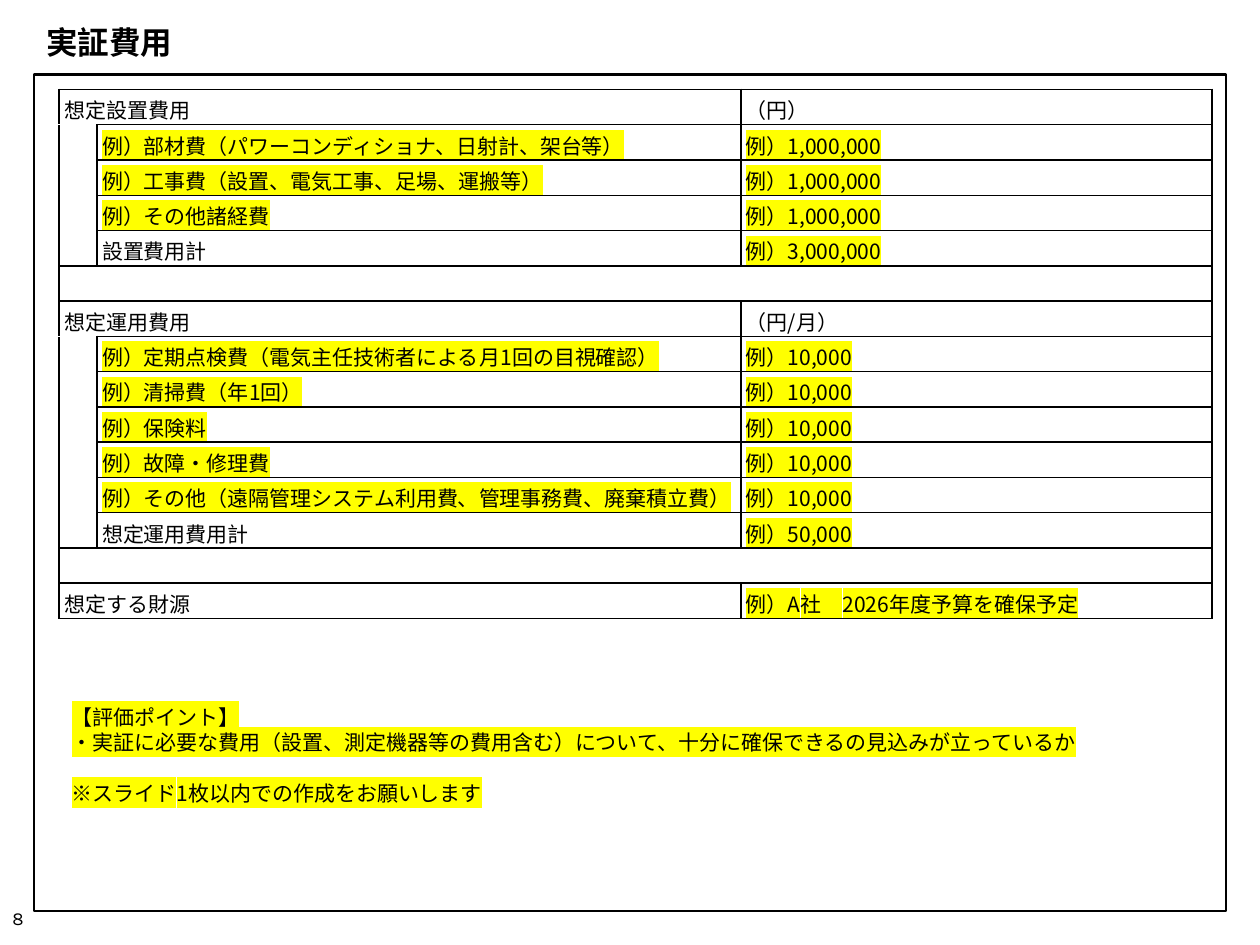
from dataclasses import dataclass
from typing import Any

from lxml.etree import SubElement
from pptx import Presentation
from pptx.dml.color import RGBColor
from pptx.enum.shapes import MSO_SHAPE
from pptx.enum.text import MSO_ANCHOR
from pptx.oxml import parse_xml
from pptx.oxml.ns import nsdecls, qn
from pptx.util import Inches, Pt

COST = [
    ("想定設置費用", "（円）", [
        ("例）部材費（パワーコンディショナ、日射計、架台等）", "例）1,000,000"),
        ("例）工事費（設置、電気工事、足場、運搬等）", "例）1,000,000"),
        ("例）その他諸経費", "例）1,000,000"),
        ("設置費用計", "例）3,000,000"),
    ]),
    ("想定運用費用", "（円/月）", [
        ("例）定期点検費（電気主任技術者による月1回の目視確認）", "例）10,000"),
        ("例）清掃費（年1回）", "例）10,000"),
        ("例）保険料", "例）10,000"),
        ("例）故障・修理費", "例）10,000"),
        ("例）その他（遠隔管理システム利用費、管理事務費、廃棄積立費）", "例）10,000"),
        ("想定運用費用計", "例）50,000"),
    ]),
]
FUND = ("想定する財源", "例）A社　2026年度予算を確保予定")
NOTES = [
    "【評価ポイント】",
    "・実証に必要な費用（設置、測定機器等の費用含む）について、十分に確保できるの見込みが立っているか",
    "※スライド1枚以内での作成をお願いします",
]


def color(code):
    """Turn a hex string into a colour."""
    return RGBColor.from_string(code)


@dataclass
class Page:
    """Style and current slide, with a method for each kind of element."""
    slide: Any
    font: str = "Noto Sans CJK JP"
    ink: str = "000000"
    mark: str = "FFFF00"
    paper: str = "FFFFFF"

    def label(self, para, text, size=12, font=None, bold=False, mark=False):
        """Fill a paragraph with one styled run."""
        name = font or self.font
        style = para.font
        style.name, style.size, style.bold = name, Pt(size), bold
        style.color.rgb = color(self.ink)
        run = para.add_run()
        run.text = text
        props = run._r.get_or_add_rPr()
        if mark:
            light = SubElement(props, qn("a:highlight"))
            SubElement(light, qn("a:srgbClr")).set("val", self.mark)
        SubElement(props, qn("a:ea")).set("typeface", name)

    def text(self, box, lines, anchor=MSO_ANCHOR.MIDDLE, **style):
        """Add a text box and return its paragraphs."""
        frame = self.slide.shapes.add_textbox(*map(Inches, box)).text_frame
        frame.word_wrap = True
        frame.vertical_anchor = anchor
        for i, line in enumerate(lines):
            para = frame.add_paragraph() if i else frame.paragraphs[0]
            self.label(para, line, **style)
        return frame.paragraphs

    def frame(self, box):
        """Add an unfilled outline."""
        shape = self.slide.shapes.add_shape(MSO_SHAPE.RECTANGLE, *map(Inches, box))
        shape.shadow.inherit = False
        shape.fill.background()
        shape.line.color.rgb = color(self.ink)
        shape.line.width = Pt(1.5)

    def edge(self, cell, white=""):
        """Draw the four cell borders, those named in white being pale."""
        props = cell._tc.get_or_add_tcPr()
        for i, side in enumerate("LRTB"):
            tone = self.paper if side in white else self.ink
            props.insert(i, parse_xml(
                f'<a:ln{side} {nsdecls("a")} w="12700"><a:solidFill>'
                f'<a:srgbClr val="{tone}"/></a:solidFill></a:ln{side}>'))

    def cell(self, cell, text, white=""):
        """Style a table cell and fill in its text."""
        cell.fill.background()
        self.edge(cell, white)
        cell.vertical_anchor = MSO_ANCHOR.MIDDLE
        cell.margin_left = cell.margin_right = Inches(0.04)
        cell.margin_top = cell.margin_bottom = Inches(0.04)
        para = cell.text_frame.paragraphs[0]
        if text:
            self.label(para, text, mark=text.startswith("例"))
        else:
            para._p.get_or_add_endParaRPr().set("sz", "1200")

    def table(self, box, cols, rows, spans, white):
        """Add a table with merged cells."""
        grid = self.slide.shapes.add_table(
            len(rows), len(cols), *map(Inches, box)).table
        grid.first_row = grid.horz_banding = False
        for col, wide in zip(grid.columns, cols):
            col.width = Inches(wide)
        for r, row in enumerate(rows):
            grid.rows[r].height = Inches(box[3] / len(rows))
            for c, text in enumerate(row):
                self.cell(grid.cell(r, c), text, white.get((r, c), ""))
        for first, last in spans:
            grid.cell(*first).merge(grid.cell(*last))


def plan():
    """Work out rows, merged spans and pale borders of the cost table."""
    rows, spans, white = [], [], {}
    for head, unit, items in COST:
        top = len(rows)
        end = top + len(items)
        rows += [(head, "", unit), *(("", *item) for item in items), ("", "", "")]
        spans += [((top, 0), (top, 1)), ((top + 1, 0), (end, 0)),
                  ((end + 1, 0), (end + 1, 2))]
        white |= {(top, 0): "B", (top + 1, 0): "T"}
    last = len(rows)
    rows.append((FUND[0], "", FUND[1]))
    spans.append(((last, 0), (last, 1)))
    return rows, spans, white


def main():
    """Build and save the slide."""
    deck = Presentation()
    deck.slide_width, deck.slide_height = Inches(10), Inches(7.5)
    page = Page(deck.slides.add_slide(deck.slide_layouts[6]))
    page.text((0.27, 0.07, 9.46, 0.52), ["実証費用"], size=18, bold=True)
    page.frame((0.27, 0.59, 9.46, 6.64))
    page.text((0, 7.09, 2.25, 0.4), ["8"], size=10.5, font="Karla")
    notes = page.text((0.47, 5.54, 8.63, 0.91), NOTES, MSO_ANCHOR.TOP, mark=True)
    for para in notes:
        para.line_spacing = Pt(14.5)
    notes[-1].space_before = Pt(14.5)
    page.table((0.47, 0.71, 9.15, 4.18), (0.3, 5.11, 3.74), *plan())
    deck.save("out.pptx")


if __name__ == "__main__":
    main()
